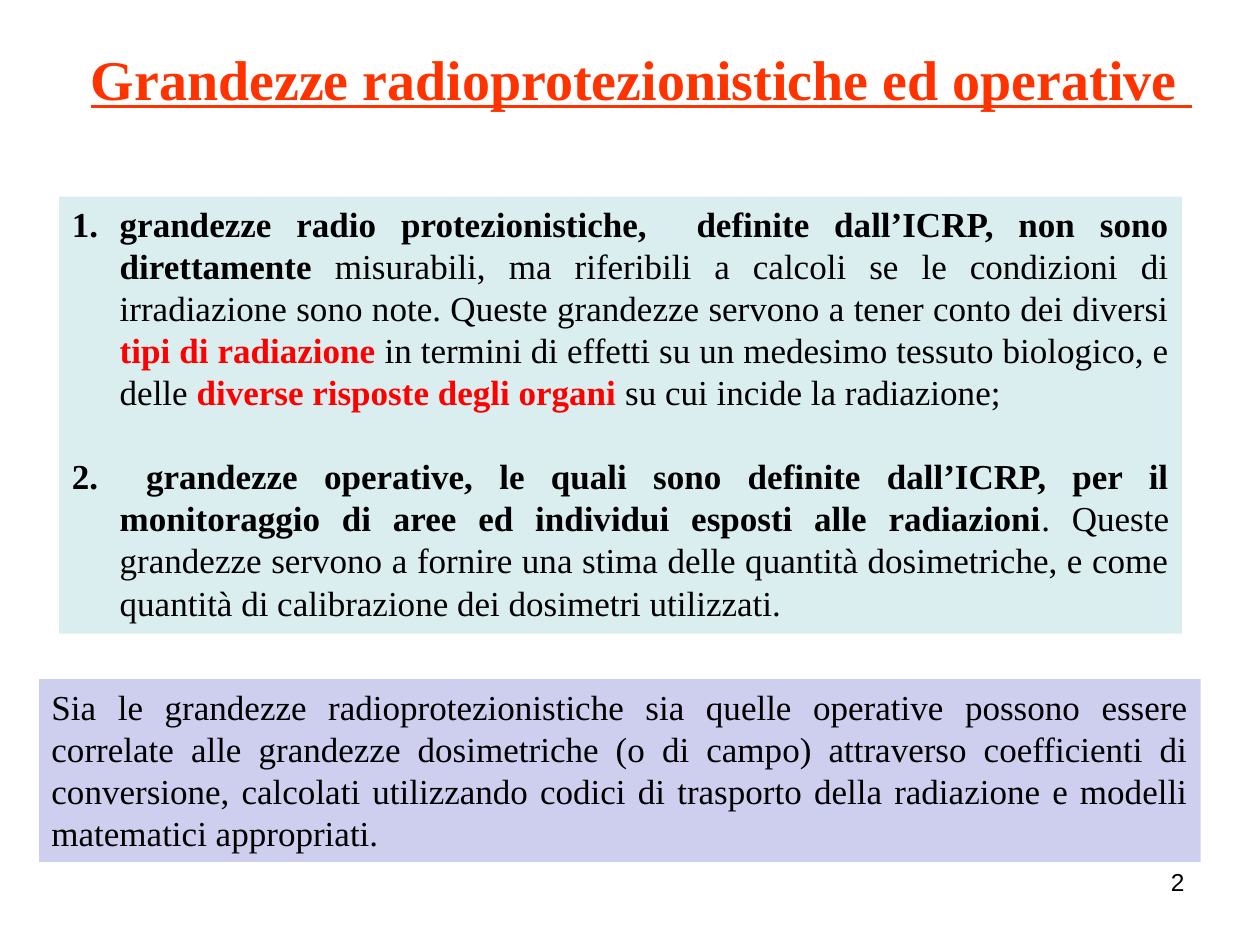
from lxml import etree
from pptx import Presentation
from pptx.dml.color import RGBColor
from pptx.enum.shapes import MSO_SHAPE
from pptx.enum.text import MSO_ANCHOR, MSO_AUTO_SIZE, PP_ALIGN
from pptx.oxml.ns import qn
from pptx.util import Inches, Pt

LEFT, RIGHT, JUSTIFY = PP_ALIGN.LEFT, PP_ALIGN.RIGHT, PP_ALIGN.JUSTIFY
TOP = MSO_ANCHOR.TOP
NO_AUTOFIT = MSO_AUTO_SIZE.NONE
RECTANGLE = MSO_SHAPE.RECTANGLE

SERIF = "Times New Roman"
BLACK, RED, ORANGE = "000000", "FF0000", "FF3300"
PALE_TEAL, LAVENDER = "DAEDEF", "CECEEF"
BODY_LINE = Pt(24)

# Each list item is a sequence of (text, format) runs
BOLD = {"bold": True}
KEYWORD = {"bold": True, "color": RED}
QUANTITIES = [
    [
        ("grandezze radio protezionistiche,  definite dall’ICRP, non sono direttamente ", BOLD),
        ("misurabili, ma riferibili a calcoli se le condizioni di irradiazione sono note. "
         "Queste grandezze servono a tener conto dei diversi ", {}),
        ("tipi di radiazione ", KEYWORD),
        ("in termini di effetti su un medesimo tessuto biologico, e delle ", {}),
        ("diverse risposte degli organi ", KEYWORD),
        ("su cui incide la radiazione;", {}),
    ],
    [
        (" grandezze operative, le quali sono definite dall’ICRP, per il monitoraggio "
         "di aree ed individui esposti alle radiazioni", BOLD),
        (". Queste grandezze servono a fornire una stima delle quantità dosimetriche, "
         "e come quantità di calibrazione dei dosimetri utilizzati.", {}),
    ],
]
CONCLUSION = (
    "Sia le grandezze radioprotezionistiche sia quelle operative possono essere correlate "
    "alle grandezze dosimetriche (o di campo) attraverso coefficienti di conversione, "
    "calcolati utilizzando codici di trasporto della radiazione e modelli matematici appropriati."
)


def set_fill(shape, color):
    shape.fill.solid()
    shape.fill.fore_color.rgb = RGBColor.from_string(color)


def place(shape, left, top, width, height):
    """Position a shape and give its text frame the common settings."""
    shape.left, shape.top = Inches(left), Inches(top)
    shape.width, shape.height = Inches(width), Inches(height)
    frame = shape.text_frame
    frame.word_wrap = True
    frame.auto_size = NO_AUTOFIT
    frame.vertical_anchor = TOP
    return frame


def format_paragraph(paragraph, align, line=None, before=0):
    paragraph.alignment = align
    paragraph.space_before = Pt(before)
    if line is not None:
        paragraph.line_spacing = line


def add_text(paragraph, text, size=20, font=SERIF, color=BLACK, bold=False, underline=False):
    run = paragraph.add_run()
    run.text = text
    run.font.size = Pt(size)
    run.font.name = font
    run.font.color.rgb = RGBColor.from_string(color)
    run.font.bold = bold
    run.font.underline = underline
    return run


def number_paragraph(paragraph, indent=0.38):
    properties = paragraph._p.get_or_add_pPr()
    properties.set("marL", str(Inches(indent)))
    properties.set("indent", str(-Inches(indent)))
    etree.SubElement(properties, qn("a:buFont"), typeface="+mj-lt")
    etree.SubElement(properties, qn("a:buAutoNum"), type="arabicPeriod")


def add_title(slide):
    frame = place(slide.shapes.title, 0.62, 0.3, 10.21, 0.64)
    paragraph = frame.paragraphs[0]
    format_paragraph(paragraph, LEFT)
    style = {"size": 32, "color": ORANGE, "underline": True}
    add_text(paragraph, "Grandezze radioprotezionistiche ed operative", bold=True, **style)
    add_text(paragraph, " ", **style)


def add_numbered_list(slide):
    body = slide.placeholders[1]
    frame = place(body, 0.47, 1.56, 8.91, 3.47)
    set_fill(body, PALE_TEAL)
    for index, runs in enumerate(QUANTITIES):
        paragraph = frame.add_paragraph() if index else frame.paragraphs[0]
        format_paragraph(paragraph, JUSTIFY, BODY_LINE, before=24 if index else 0)
        number_paragraph(paragraph)
        for text, style in runs:
            add_text(paragraph, text, **style)


def add_conclusion(slide):
    panel = slide.shapes.add_shape(RECTANGLE, 0, 0, 0, 0)
    frame = place(panel, 0.31, 5.39, 9.22, 1.45)
    panel.shadow.inherit = False
    panel.line.fill.background()
    set_fill(panel, LAVENDER)
    paragraph = frame.paragraphs[0]
    format_paragraph(paragraph, JUSTIFY, BODY_LINE)
    add_text(paragraph, CONCLUSION)


def add_page_number(slide):
    frame = place(slide.shapes.add_textbox(0, 0, 0, 0), 7.17, 6.83, 2.33, 0.52)
    paragraph = frame.paragraphs[0]
    format_paragraph(paragraph, RIGHT)
    add_text(paragraph, "2", size=14, font="Arial")


def main():
    presentation = Presentation()
    presentation.slide_width, presentation.slide_height = Inches(10), Inches(7.5)
    # Title and content layout
    slide = presentation.slides.add_slide(presentation.slide_layouts[1])
    add_title(slide)
    add_numbered_list(slide)
    add_conclusion(slide)
    add_page_number(slide)
    presentation.save("out.pptx")


if __name__ == "__main__":
    main()
